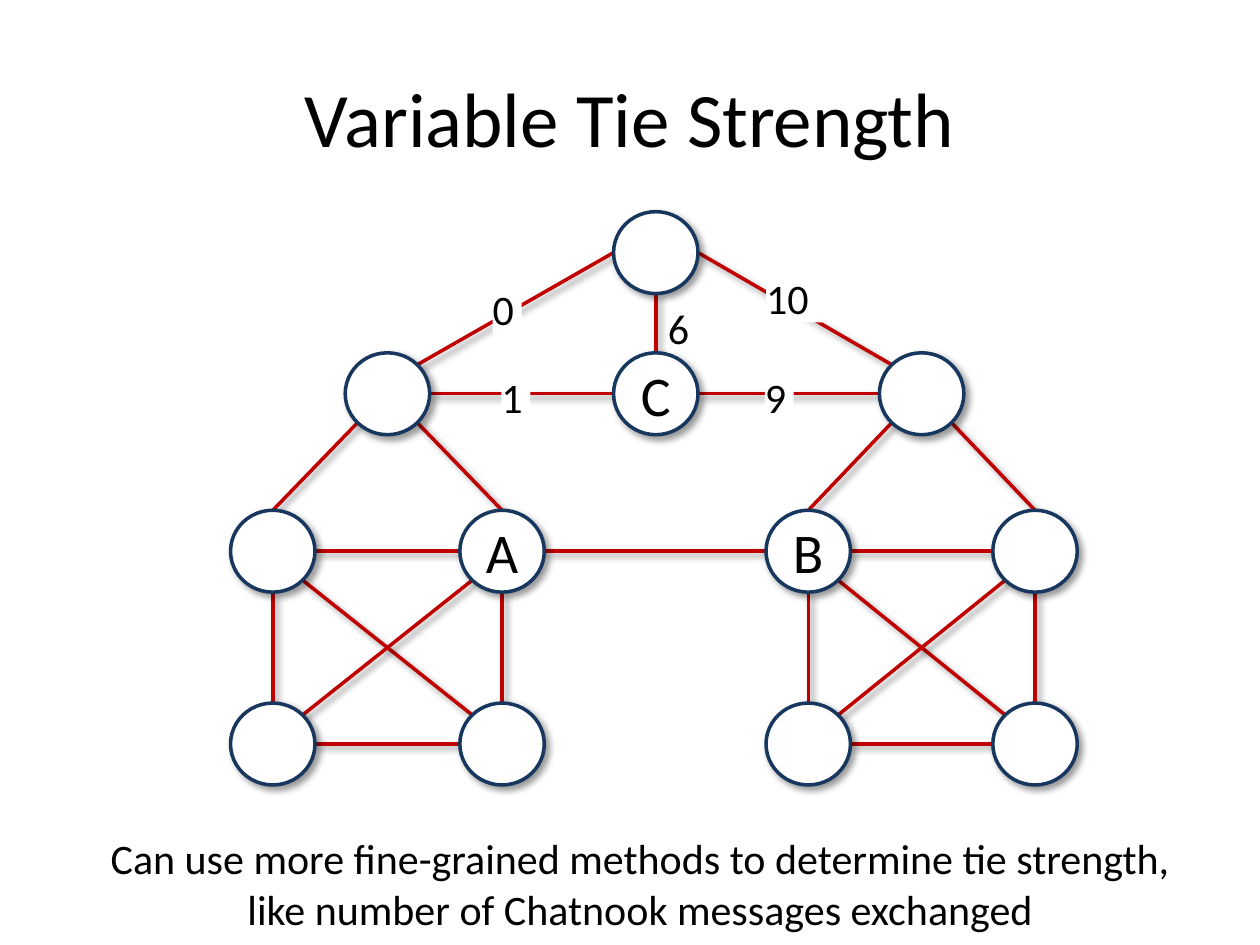
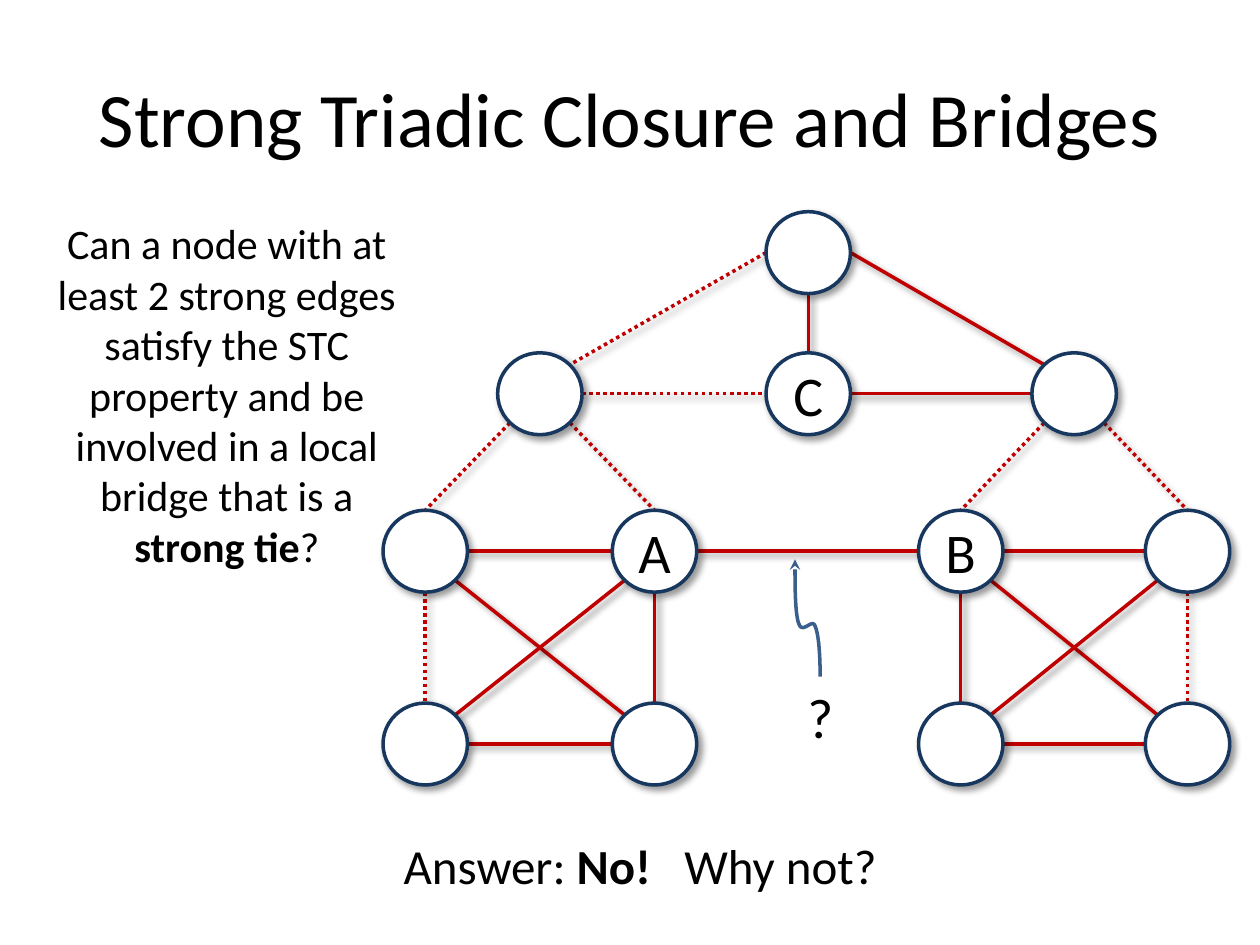
from lxml import etree
from pptx import Presentation
from pptx.dml.color import RGBColor
from pptx.enum.dml import MSO_LINE
from pptx.enum.shapes import MSO_CONNECTOR, MSO_SHAPE
from pptx.enum.text import MSO_ANCHOR, MSO_AUTO_SIZE, PP_ALIGN
from pptx.oxml import parse_xml
from pptx.oxml.ns import qn
from pptx.util import Inches, Pt

OVAL = MSO_SHAPE.OVAL
STRAIGHT = MSO_CONNECTOR.STRAIGHT
DOTTED = MSO_LINE.ROUND_DOT
LEFT, CENTER = PP_ALIGN.LEFT, PP_ALIGN.CENTER
TOP, MIDDLE = MSO_ANCHOR.TOP, MSO_ANCHOR.MIDDLE
GROW, FIXED = MSO_AUTO_SIZE.SHAPE_TO_FIT_TEXT, MSO_AUTO_SIZE.NONE

FONT = "Calibri"
BLACK, WHITE = "000000", "FFFFFF"
NAVY, RED, BLUE = "17375E", "C00000", "3A5F8C"
LINE_WIDTH = Pt(2)
SHADOW = (
    '<a:effectLst xmlns:a="http://schemas.openxmlformats.org/drawingml/2006/main">'
    '<a:outerShdw blurRad="50800" dist="38100" dir="2700000" algn="tl" rotWithShape="0">'
    '<a:srgbClr val="000000"><a:alpha val="40000"/></a:srgbClr>'
    "</a:outerShdw></a:effectLst>"
)

# The network: left and top of each node, and its letter
NODE_WIDTH, NODE_HEIGHT = 0.67, 0.65
NODES = {
    "peak": (4.87, 1.68, ""),
    "C": (4.87, 2.8, "C"),
    "left hub": (2.74, 2.8, ""),
    "right hub": (6.98, 2.8, ""),
    "outer left": (1.83, 4.05, ""),
    "A": (3.65, 4.05, "A"),
    "B": (6.08, 4.05, "B"),
    "outer right": (7.88, 4.05, ""),
    "low outer left": (1.83, 5.58, ""),
    "low A": (3.65, 5.58, ""),
    "low B": (6.08, 5.58, ""),
    "low outer right": (7.88, 5.58, ""),
}

# Directions from the centre of a node to its rim
N, S, W, E = (0, -1), (0, 1), (-1, 0), (1, 0)
NW, NE, SW, SE = (-0.71, -0.71), (0.71, -0.71), (-0.71, 0.71), (0.71, 0.71)

STRONG_TIES = [
    ("peak", E, "right hub", NW),
    ("peak", S, "C", N),
    ("C", E, "right hub", W),
    ("A", E, "B", W),
    ("A", S, "low A", N),
    ("B", S, "low B", N),
]
for first, second in (("outer left", "A"), ("B", "outer right")):
    STRONG_TIES += [
        (first, E, second, W),
        ("low " + first, E, "low " + second, W),
        (first, SE, "low " + second, NW),
        (second, SW, "low " + first, NE),
    ]
WEAK_TIES = [
    ("peak", W, "left hub", NE),
    ("left hub", E, "C", W),
    ("left hub", SW, "outer left", N),
    ("left hub", SE, "A", N),
    ("right hub", SW, "B", N),
    ("right hub", SE, "outer right", N),
    ("outer left", S, "low outer left", N),
    ("outer right", S, "low outer right", N),
]


def rgb(colour):
    return RGBColor.from_string(colour)


def write(box, *texts, size=24, align=CENTER, anchor=TOP, fit=GROW, margin=None, bold=()):
    """Fill a box with one paragraph; bold lists the spans set in bold."""
    frame = box.text_frame
    frame.word_wrap = True
    frame.auto_size = fit
    frame.vertical_anchor = anchor
    if margin is not None:
        frame.margin_left = frame.margin_right = margin
        frame.margin_top = frame.margin_bottom = margin
    para = frame.paragraphs[0]
    para.alignment = align
    for text in texts:
        span = para.add_run()
        span.text = text
        span.font.name = FONT
        span.font.size = Pt(size)
        span.font.bold = text in bold
        span.font.color.rgb = rgb(BLACK)
    return para


deck = Presentation()
deck.slide_width, deck.slide_height = Inches(10), Inches(7.5)
pages = []

# Title and network on both slides
for heading, shift, weak_dash in (
    ("Variable Tie Strength", 0, None),
    ("Strong Triadic Closure and Bridges", 1.21, DOTTED),
):
    page = deck.slides.add_slide(deck.slide_layouts[5])
    pages.append(page)
    title = page.shapes.title
    title.left, title.top, title.width, title.height = map(Inches, (0.5, 0.3, 9, 1.25))
    write(title, heading, size=44, anchor=MIDDLE, fit=FIXED)

    shadowed = []
    for ties, dash in ((STRONG_TIES, None), (WEAK_TIES, weak_dash)):
        for start, start_side, end, end_side in ties:
            ends = []
            for node, (across, down) in ((start, start_side), (end, end_side)):
                left, top, letter = NODES[node]
                ends.append(Inches(left + shift + NODE_WIDTH / 2 * (1 + across)))
                ends.append(Inches(top + NODE_HEIGHT / 2 * (1 + down)))
            tie = page.shapes.add_connector(STRAIGHT, *ends)
            tie.line.color.rgb = rgb(RED)
            tie.line.width = LINE_WIDTH
            if dash:
                tie.line.dash_style = dash
            shadowed.append(tie)

    for left, top, letter in NODES.values():
        circle = page.shapes.add_shape(
            OVAL, Inches(left + shift), Inches(top), Inches(NODE_WIDTH), Inches(NODE_HEIGHT)
        )
        circle.fill.solid()
        circle.fill.fore_color.rgb = rgb(WHITE)
        circle.line.color.rgb = rgb(NAVY)
        circle.line.width = LINE_WIDTH
        if letter:
            write(circle, letter, size=32, anchor=MIDDLE, fit=FIXED)
        shadowed.append(circle)

    for item in shadowed:
        item._element.spPr.append(parse_xml(SHADOW))

strength_page, closure_page = pages

# Slide 1: tie strengths and caption
for strength, left, top, width in (
    ("1", 3.98, 2.95, 0.23),
    ("0", 3.91, 2.25, 0.23),
    ("10", 6.08, 2.16, 0.45),
    ("6", 5.3, 2.4, 0.23),
    ("9", 6.07, 2.95, 0.23),
):
    label = strength_page.shapes.add_textbox(*map(Inches, (left, top, width, 0.4)))
    label.fill.solid()
    label.fill.fore_color.rgb = rgb(WHITE)
    write(label, strength, align=LEFT, margin=0)

caption = strength_page.shapes.add_textbox(*map(Inches, (0.62, 6.56, 8.92, 0.91)))
write(
    caption,
    "Can use more fine-grained methods to determine tie strength, "
    "like number of Chatnook messages exchanged",
)

# Slide 2: question and answer
question = closure_page.shapes.add_textbox(*map(Inches, (0.23, 1.68, 3.14, 2.93)))
write(
    question,
    "Can a node with at least 2 strong edges satisfy the STC property "
    "and be involved in a local bridge that is a ",
    "strong tie",
    "?",
    bold=("strong tie",),
)

answer = closure_page.shapes.add_textbox(*map(Inches, (0.62, 6.58, 8.92, 0.57)))
para = write(answer, "Answer: ", "No!", " ", "Why not?", size=28, bold=("No!",))
para.runs[2]._r.get_or_add_rPr().set("spc", "1270")  # wide gap before the last span

# Slide 2: wavy arrow from the question mark to the bridge
mark = closure_page.shapes.add_textbox(*map(Inches, (6.31, 5.37, 0.69, 0.64)))
write(mark, "?", size=32, align=LEFT)

CURVES = [
    ((6.51, 5.37), (6.51, 5.21), (6.5, 5.04), (6.47, 4.97)),
    ((6.47, 4.97), (6.45, 4.9), (6.37, 5.04), (6.34, 4.95)),
    ((6.34, 4.95), (6.31, 4.87), (6.31, 4.65), (6.31, 4.44)),
]
STEPS = 12
points = []
for curve in CURVES:
    for step in range(1, STEPS + 1):
        t = step / STEPS
        weights = ((1 - t) ** 3, 3 * t * (1 - t) ** 2, 3 * t**2 * (1 - t), t**3)
        points.append(
            tuple(Inches(sum(w * p[axis] for w, p in zip(weights, curve))) for axis in (0, 1))
        )
builder = closure_page.shapes.build_freeform(*map(Inches, CURVES[0][0]))
builder.add_line_segments(points, close=False)
arrow = builder.convert_to_shape()
arrow.shadow.inherit = False
arrow.fill.background()
arrow.line.color.rgb = rgb(BLUE)
arrow.line.width = LINE_WIDTH
etree.SubElement(arrow._element.spPr.find(qn("a:ln")), qn("a:tailEnd")).set("type", "stealth")

deck.save("out.pptx")
